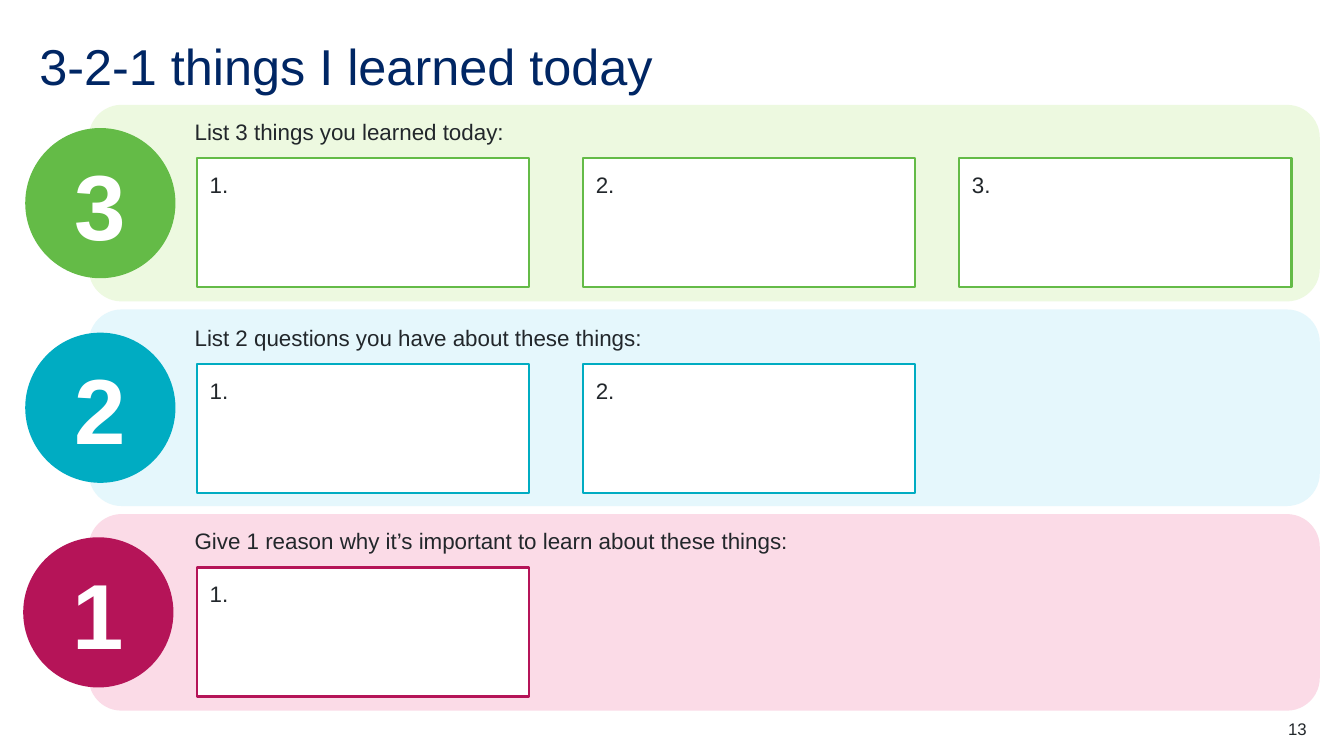
from pptx import Presentation
from pptx.dml.color import RGBColor
from pptx.enum.shapes import MSO_SHAPE
from pptx.enum.text import MSO_ANCHOR, PP_ALIGN
from pptx.util import Pt

RECT, ROUND, OVAL = MSO_SHAPE.RECTANGLE, MSO_SHAPE.ROUNDED_RECTANGLE, MSO_SHAPE.OVAL
TOP, MIDDLE, BOTTOM = MSO_ANCHOR.TOP, MSO_ANCHOR.MIDDLE, MSO_ANCHOR.BOTTOM
LEFT, CENTER, RIGHT = PP_ALIGN.LEFT, PP_ALIGN.CENTER, PP_ALIGN.RIGHT

PX = 9144  # 100 px to the inch
COLORS = {
    "navy": "002664", "text": "22272B", "white": "FFFFFF",
    "green": "64BB47", "pale_green": "EDF9E0",
    "teal": "00ACC2", "pale_teal": "E5F7FC",
    "berry": "B51458", "pale_berry": "FBDBE7",
}


class Deck:
    """Holds the style and the current slide."""

    font = "Arial"

    def __init__(self, width, height):
        self.prs = Presentation()
        self.prs.slide_width, self.prs.slide_height = width * PX, height * PX
        self.s = self.prs.slides.add_slide(self.prs.slide_layouts[6])

    def color(self, name):
        return RGBColor.from_string(COLORS[name])

    def set_text(self, sp, text, size, color="text", bold=False, align=LEFT,
                 anchor=TOP, inset=13, spacing=1.0):
        tf = sp.text_frame
        frame = {"word_wrap": True, "vertical_anchor": anchor}
        for side in ("left", "right", "top", "bottom"):
            frame["margin_" + side] = inset * PX
        p = tf.paragraphs[0]
        r = p.add_run()
        r.text = text
        formats = (
            (tf, frame),
            (p, {"alignment": align, "line_spacing": spacing}),
            (r.font, {"name": self.font, "size": Pt(size), "bold": bold}),
        )
        for target, values in formats:
            for key, value in values.items():
                setattr(target, key, value)
        r.font.color.rgb = self.color(color)

    def text(self, box, text, size, **style):
        sp = self.s.shapes.add_textbox(*(v * PX for v in box))
        self.set_text(sp, text, size, **style)

    def shape(self, kind, box, fill, line=None):
        sp = self.s.shapes.add_shape(kind, *(v * PX for v in box))
        sp.shadow.inherit = False
        sp.fill.solid()
        sp.fill.fore_color.rgb = self.color(fill)
        if line:
            sp.line.color.rgb = self.color(line)
            sp.line.width = Pt(1.5)
        else:
            sp.line.fill.background()
        return sp

    def band(self, top, color):
        self.shape(ROUND, (88, top, 1221, 195), "pale_" + color)

    def answer(self, left, top, number, color):
        sp = self.shape(RECT, (left, top, 330, 128), "white", color)
        self.set_text(sp, f"{number}.", 16)

    def badge(self, left, top, number, color):
        sp = self.shape(OVAL, (left, top, 149, 149), color)
        self.set_text(sp, str(number), 66, color="white", bold=True,
                      align=CENTER, anchor=MIDDLE, inset=5)


def main():
    deck = Deck(1333, 750)

    # Title
    deck.text((39, 39, 1256, 60), "3-2-1 things I learned today", 36,
              color="navy", anchor=MIDDLE, inset=0, spacing=0.9)

    # Rows: count, colour, prompt, prompt top, prompt width, answer top, badge left
    rows = [
        (3, "green", "List 3 things you learned today:", 104, 478, 157, 25),
        (2, "teal", "List 2 questions you have about these things:", 309, 478, 361, 25),
        (1, "berry", "Give 1 reason why it’s important to learn about these things:",
         510, 665, 563, 23),
    ]
    answer_lefts = (195, 578, 951)
    for i, (count, color, prompt, prompt_top, width, answer_top, badge_left) in enumerate(rows):
        band_top = 104 + 203 * i
        deck.band(band_top, color)
        deck.text((180, prompt_top, width, 61), prompt, 16)
        for number, left in enumerate(answer_lefts[:count], 1):
            deck.answer(left, answer_top, number, color)
        deck.badge(badge_left, band_top + 23, count, color)

    # Page number
    deck.text((1217, 713, 79, 20), "13", 12, align=RIGHT, anchor=BOTTOM, inset=0)

    deck.prs.save("out.pptx")


if __name__ == "__main__":
    main()
